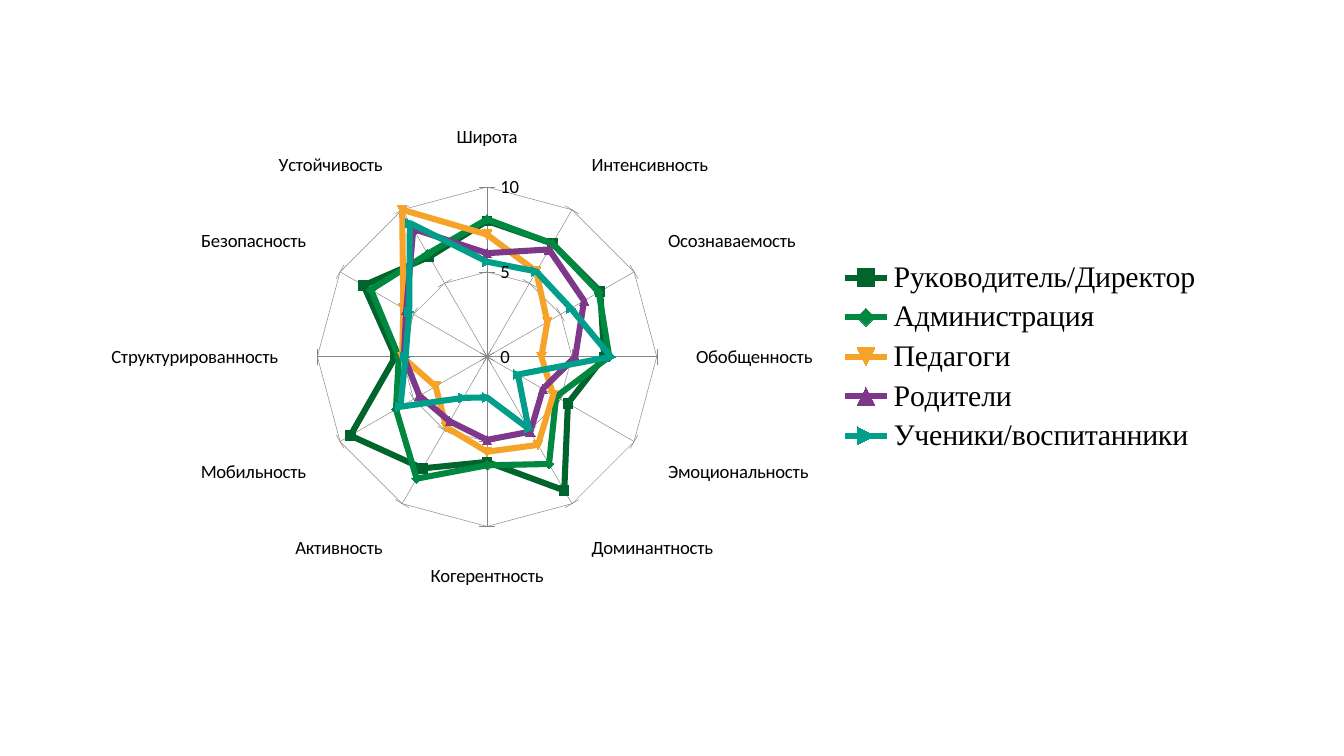
from pptx import Presentation
from pptx.chart.data import CategoryChartData as Data
from pptx.dml.color import RGBColor
from pptx.enum.chart import XL_CHART_TYPE as Kind
from pptx.enum.chart import XL_LEGEND_POSITION as Side
from pptx.enum.chart import XL_TICK_MARK as Tick
from pptx.util import Inches, Pt

TRAITS = [
    "Широта", "Интенсивность", "Осознаваемость", "Обобщенность",
    "Эмоциональность", "Доминантность", "Когерентность", "Активность",
    "Мобильность", "Структурированность", "Безопасность", "Устойчивость",
]
GROUPS = [
    ("Руководитель/Директор", "00642D",
     [8, 7.7, 7.7, 6.9, 5.5, 9.1, 6.2, 7.6, 9.3, 5.4, 8.4, 6.8]),
    ("Администрация", "008841",
     [8.1, 7.7, 7.6, 7.2, 4.7, 7.3, 6.4, 8.3, 6.2, 5.2, 7.9, 7]),
    ("Педагоги", "F6A429",
     [7.2, 5.8, 4.1, 3.2, 4.5, 6, 5.6, 4.8, 3.5, 5, 5.7, 10]),
    ("Родители", "7E388A",
     [6.1, 7.3, 6.6, 5.2, 3.8, 5.1, 4.9, 4.4, 4.6, 4.9, 5.5, 8.7]),
    ("Ученики/воспитанники", "019E8B",
     [5.6, 5.8, 5.7, 7.3, 2.1, 4.9, 2.4, 2.8, 5.9, 4.8, 5.3, 9.1]),
]
GRAY = "868686"
BLACK = "000000"


def rgb(code):
    return RGBColor.from_string(code)


def set_font(font, name, size):
    font.name = name
    font.size = Pt(size)
    font.bold = False
    font.color.rgb = rgb(BLACK)


def set_line(line, code, width):
    line.color.rgb = rgb(code)
    line.width = Pt(width)


def set_axis(axis, tick):
    axis.has_major_gridlines = True
    axis.major_tick_mark = tick
    axis.minor_tick_mark = Tick.NONE
    axis.tick_labels.number_format = "General"
    axis.tick_labels.number_format_is_linked = False
    set_line(axis.major_gridlines.format.line, GRAY, 0.25)
    set_line(axis.format.line, GRAY, 0.25)


def set_series(series, code):
    set_line(series.format.line, code, 3.25)
    mark = series.marker
    mark.size = 5
    mark.format.fill.solid()
    mark.format.fill.fore_color.rgb = rgb(code)
    set_line(mark.format.line, code, 0.75)


def set_legend(chart):
    chart.has_legend = True
    legend = chart.legend
    legend.position = Side.RIGHT
    legend.include_in_layout = False
    set_font(legend.font, "Times New Roman", 16)


def add_radar(slide):
    data = Data(number_format="General")
    data.categories = TRAITS
    for name, _, values in GROUPS:
        data.add_series(name, values)
    frame = slide.shapes.add_chart(
        Kind.RADAR_MARKERS, Inches(0.66), Inches(0.36),
        Inches(8.39), Inches(4.59), data)
    chart = frame.chart
    chart.has_title = False
    set_font(chart.font, "Calibri", 10)
    plot = chart.plots[0]
    plot.vary_by_categories = False
    for series, (_, code, _) in zip(plot.series, GROUPS):
        set_series(series, code)

    set_axis(chart.category_axis, Tick.OUTSIDE)
    scale = chart.value_axis
    set_axis(scale, Tick.CROSS)
    scale.minimum_scale = 0
    scale.maximum_scale = 10
    scale.major_unit = 5
    set_legend(chart)


def main():
    deck = Presentation()
    deck.slide_width = Inches(10)
    deck.slide_height = deck.slide_width * 9 // 16
    slide = deck.slides.add_slide(deck.slide_layouts[6])
    add_radar(slide)
    deck.save("out.pptx")


if __name__ == "__main__":
    main()
